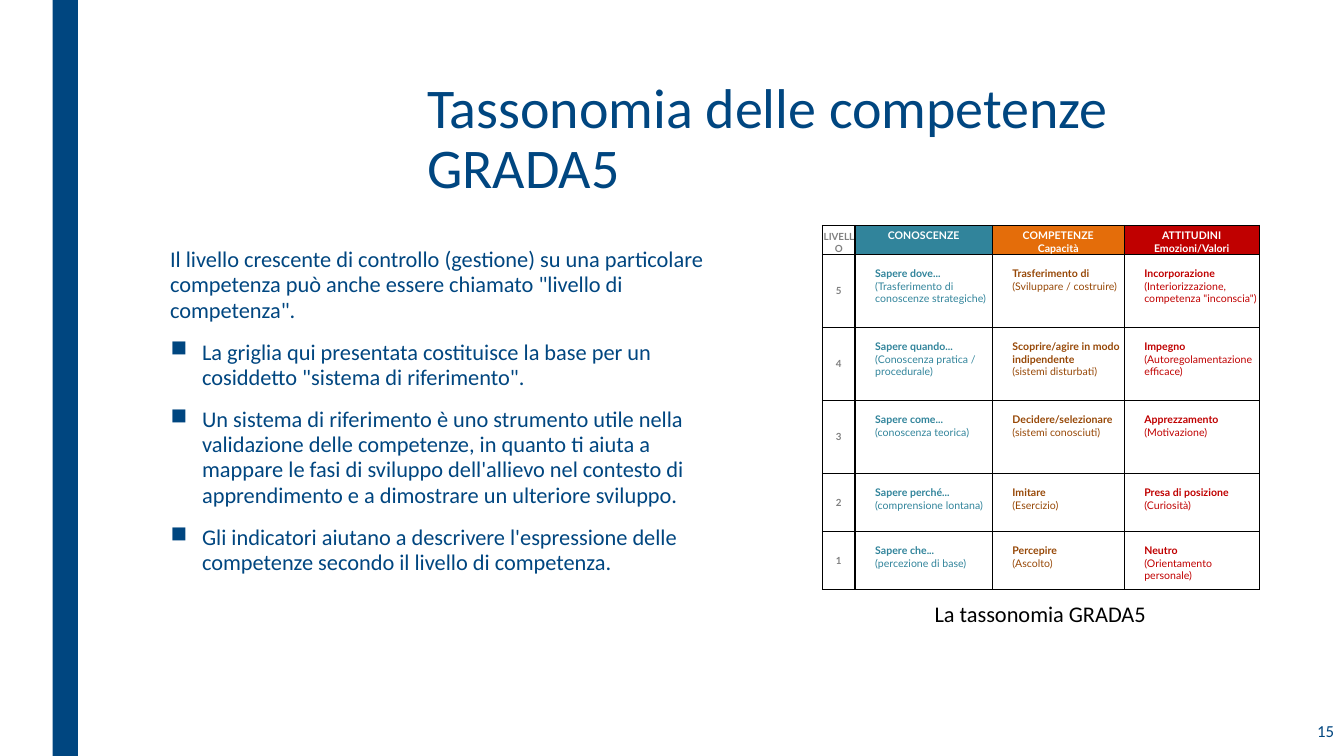
from lxml import etree
from pptx import Presentation
from pptx.dml.color import RGBColor
from pptx.enum.shapes import MSO_SHAPE
from pptx.enum.text import MSO_ANCHOR, MSO_AUTO_SIZE, PP_ALIGN
from pptx.oxml.ns import qn
from pptx.util import Pt

RECTANGLE = MSO_SHAPE.RECTANGLE
TOP, MIDDLE, BOTTOM = MSO_ANCHOR.TOP, MSO_ANCHOR.MIDDLE, MSO_ANCHOR.BOTTOM
LEFT, CENTER, RIGHT = PP_ALIGN.LEFT, PP_ALIGN.CENTER, PP_ALIGN.RIGHT
GROW = MSO_AUTO_SIZE.SHAPE_TO_FIT_TEXT

NAVY = RGBColor(0x00, 0x46, 0x80)
BLACK = RGBColor(0x00, 0x00, 0x00)
WHITE = RGBColor(0xFF, 0xFF, 0xFF)
GREY = RGBColor(0x80, 0x80, 0x80)
TEAL = RGBColor(0x31, 0x84, 0x9B)
ORANGE = RGBColor(0xE4, 0x6D, 0x0A)
BROWN = RGBColor(0x97, 0x48, 0x07)
RED = RGBColor(0xC0, 0x00, 0x00)

INTRO = ("Il livello crescente di controllo (gestione) su una particolare "
         "competenza può anche essere chiamato \"livello di competenza\".")
POINTS = [
    "La griglia qui presentata costituisce la base per un cosiddetto "
    "\"sistema di riferimento\".",
    "Un sistema di riferimento è uno strumento utile nella validazione delle "
    "competenze, in quanto ti aiuta a mappare le fasi di sviluppo dell'allievo "
    "nel contesto di apprendimento e a dimostrare un ulteriore sviluppo.",
    "Gli indicatori aiutano a descrivere l'espressione delle competenze "
    "secondo il livello di competenza.",
]

# Heading lines, heading fill, text colour of the column
DIMENSIONS = [
    (["CONOSCENZE"], TEAL, TEAL),
    (["COMPETENZE", "Capacità"], ORANGE, BROWN),
    (["ATTITUDINI", "Emozioni/Valori"], RED, RED),
]
LEVELS = {
    5: [("Sapere dove...", "(Trasferimento di conoscenze strategiche)"),
        ("Trasferimento di", "(Sviluppare / costruire)"),
        ("Incorporazione", "(Interiorizzazione, competenza \"inconscia\")")],
    4: [("Sapere quando...", "(Conoscenza pratica / procedurale)"),
        ("Scoprire/agire in modo indipendente", "(sistemi disturbati)"),
        ("Impegno", "(Autoregolamentazione efficace)")],
    3: [("Sapere come...", "(conoscenza teorica)"),
        ("Decidere/selezionare", "(sistemi conosciuti)"),
        ("Apprezzamento", "(Motivazione)")],
    2: [("Sapere perché...", "(comprensione lontana)"),
        ("Imitare", "(Esercizio)"),
        ("Presa di posizione", "(Curiosità)")],
    1: [("Sapere che...", "(percezione di base)"),
        ("Percepire", "(Ascolto)"),
        ("Neutro", "(Orientamento personale)")],
}
COLUMN_WIDTHS = [23.3, 98, 94.2, 96.5]
ROW_HEIGHTS = [20.8, 52.2, 52.2, 52.2, 41.5, 41.5]
CELL_LINE = 9


def write(frame, text, size, color, font="Calibri", bold=False, align=LEFT,
          spacing=None, before=0, after=0, indent=0, hanging=0, bullet=None):
    """Add one formatted paragraph, using the empty first one if it is free."""
    first = frame.paragraphs[0]
    paragraph = frame.add_paragraph() if first.runs else first
    properties = paragraph._p.get_or_add_pPr()
    properties.set("marL", str(Pt(indent)))
    properties.set("indent", str(Pt(-hanging)))
    if bullet:
        etree.SubElement(properties, qn("a:buChar"), char=bullet)
    paragraph.alignment = align
    paragraph.line_spacing = spacing
    paragraph.space_before = Pt(before)
    paragraph.space_after = Pt(after)
    run = paragraph.add_run()
    run.text = text
    run.font.name = font
    run.font.size = Pt(size)
    run.font.bold = bold
    run.font.color.rgb = color


def add_text_frame(slide, left, top, width, height, anchor=TOP):
    box = slide.shapes.add_textbox(Pt(left), Pt(top), Pt(width), Pt(height))
    frame = box.text_frame
    frame.word_wrap = True
    frame.vertical_anchor = anchor
    return frame


def add_side_bar(slide):
    bar = slide.shapes.add_shape(RECTANGLE, Pt(37.6), Pt(0), Pt(18), Pt(540))
    bar.shadow.inherit = False
    bar.fill.solid()
    bar.fill.fore_color.rgb = NAVY
    bar.line.fill.background()


def format_cell(cell, anchor, fill=None, top=0, bottom=0,
                top_line=0.5, bottom_line=0.5):
    cell.vertical_anchor = anchor
    cell.margin_left = cell.margin_right = Pt(0)
    cell.margin_top, cell.margin_bottom = Pt(top), Pt(bottom)
    properties = cell._tc.get_or_add_tcPr()
    borders = {"a:lnL": 1, "a:lnR": 1, "a:lnT": top_line, "a:lnB": bottom_line}
    for side, weight in borders.items():
        line = etree.SubElement(properties, qn(side), w=str(Pt(weight)))
        solid = etree.SubElement(line, qn("a:solidFill"))
        etree.SubElement(solid, qn("a:srgbClr"), val=str(BLACK))
    if fill is None:
        cell.fill.background()
    else:
        cell.fill.solid()
        cell.fill.fore_color.rgb = fill


def add_taxonomy(slide):
    table = slide.shapes.add_table(
        len(ROW_HEIGHTS), len(COLUMN_WIDTHS), Pt(587.5), Pt(161),
        Pt(sum(COLUMN_WIDTHS)), Pt(sum(ROW_HEIGHTS))).table
    table.first_row = table.horz_banding = False
    for column, width in zip(table.columns, COLUMN_WIDTHS):
        column.width = Pt(width)
    for row, height in zip(table.rows, ROW_HEIGHTS):
        row.height = Pt(height)

    # Heading row
    corner = table.cell(0, 0)
    format_cell(corner, BOTTOM, top_line=1, bottom_line=1)
    write(corner.text_frame, "LIVELLO", 7, GREY, "Lato", True, CENTER)
    for column, (heading, fill, _) in enumerate(DIMENSIONS, 1):
        cell = table.cell(0, column)
        format_cell(cell, BOTTOM, fill, bottom=CELL_LINE * (2 - len(heading)),
                    top_line=1, bottom_line=1)
        for line in heading:
            write(cell.text_frame, line, 7.5, WHITE, "Lato", True, CENTER)

    # One row per level, highest first
    for row, (level, stages) in enumerate(LEVELS.items(), 1):
        lines = {"top_line": 1 if row == 1 else 0.5,
                 "bottom_line": 1 if row == len(LEVELS) else 0.5}
        level_cell = table.cell(row, 0)
        format_cell(level_cell, MIDDLE, **lines)
        write(level_cell.text_frame, str(level), 7, GREY, "Lato", True, CENTER)
        for column, (stage, detail) in enumerate(stages, 1):
            cell = table.cell(row, column)
            color = DIMENSIONS[column - 1][2]
            format_cell(cell, TOP, WHITE, top=CELL_LINE, **lines)
            write(cell.text_frame, stage, 7.5, color, "Lato", True, indent=14.4)
            write(cell.text_frame, detail, 7.5, color, "Lato", indent=14.4)


def main():
    presentation = Presentation()
    presentation.slide_width, presentation.slide_height = Pt(960), Pt(540)
    slide = presentation.slides.add_slide(presentation.slide_layouts[6])

    add_side_bar(slide)

    # Title
    title = add_text_frame(slide, 298, 54, 565, 116.6)
    write(title, "Tassonomia delle competenze GRADA5", 40, NAVY, spacing=0.89)

    # Explanation
    explanation = add_text_frame(slide, 105.8, 139.7, 426.2, 320.4)
    explanation.margin_top = Pt(37)
    write(explanation, INTRO, 16, NAVY, spacing=0.94, after=2, indent=8.6)
    for point in POINTS:
        write(explanation, point, 16, NAVY, spacing=0.94, before=10, after=2,
              indent=31.5, hanging=22.5, bullet="■")

    # Slide number
    number = add_text_frame(slide, 834, 506, 126, 31.7, MIDDLE)
    write(number, "15", 12, NAVY, align=RIGHT)

    # Taxonomy grid and its caption
    caption = add_text_frame(slide, 622.8, 424.8, 240.5, 26.6)
    caption.auto_size = GROW
    write(caption, "La tassonomia GRADA5", 16, BLACK, align=CENTER)
    add_taxonomy(slide)

    presentation.save("out.pptx")


if __name__ == "__main__":
    main()
